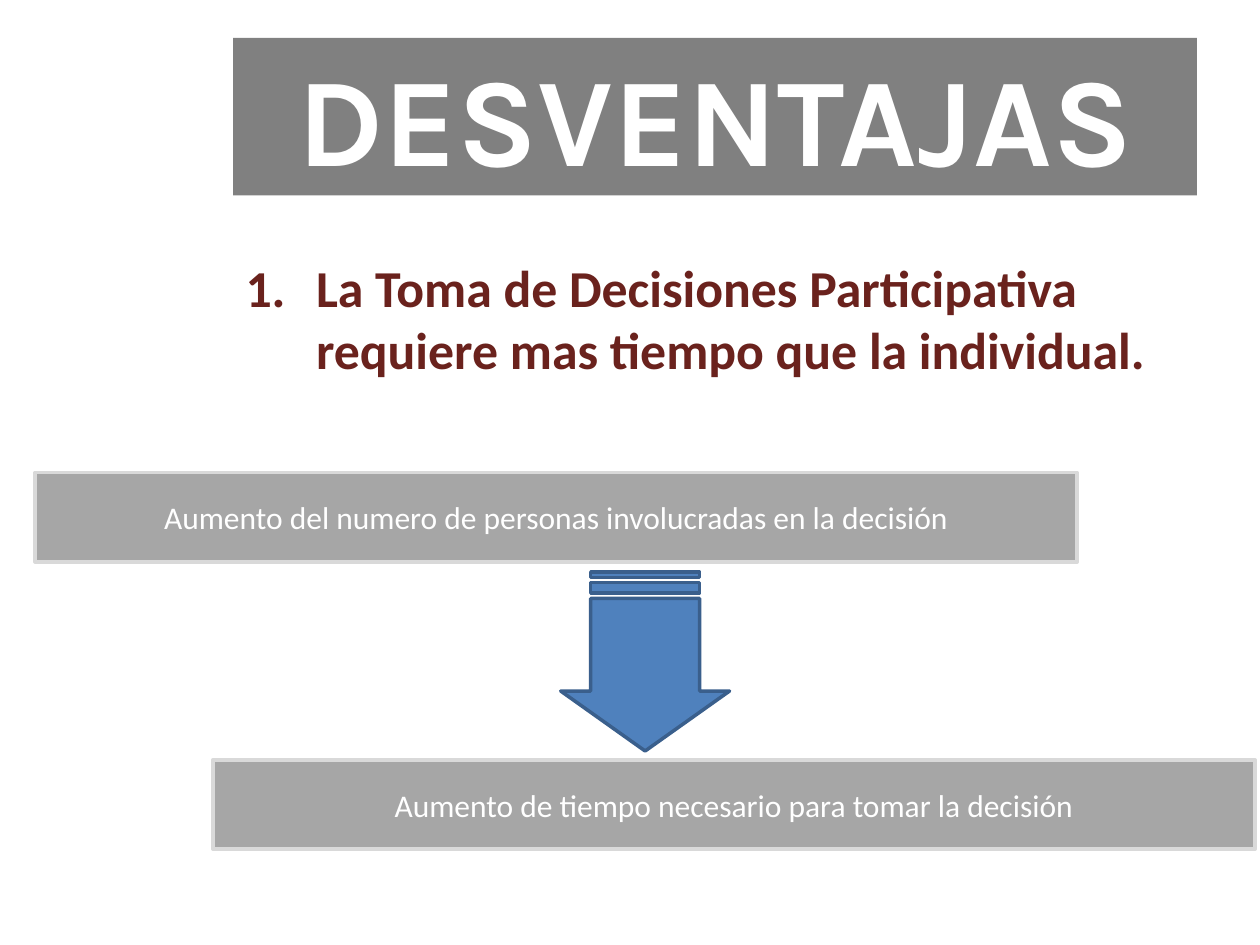
import lxml.etree
import pptx
import pptx.dml.color
import pptx.enum.shapes
import pptx.enum.text
import pptx.oxml.ns
import pptx.util

Inches = pptx.util.Inches
Pt = pptx.util.Pt
SHAPES = pptx.enum.shapes.MSO_SHAPE


def color(hex_code):
    """Turn a hex string into a colour."""
    return pptx.dml.color.RGBColor.from_string(hex_code)


def set_font(paragraph, name, size, hex_code, bold=False):
    """Set the font of a whole paragraph."""
    font = paragraph.font
    font.name, font.size, font.bold = name, Pt(size), bold
    font.color.rgb = color(hex_code)


def add_block(slide, preset, left, top, width, height, fill, line=None):
    """Add a filled shape with an optional outline."""
    block = slide.shapes.add_shape(
        preset, Inches(left), Inches(top), Inches(width), Inches(height))
    block.shadow.inherit = False
    block.fill.solid()
    block.fill.fore_color.rgb = color(fill)
    if line:
        block.line.color.rgb = color(line)
        block.line.width = Pt(2)
    else:
        block.line.fill.background()
    return block


def write_centered(block, text, name, size, bold=False):
    """Write one white centred line in a block."""
    frame = block.text_frame
    frame.word_wrap = True
    frame.vertical_anchor = pptx.enum.text.MSO_ANCHOR.MIDDLE
    paragraph = frame.paragraphs[0]
    paragraph.text = text
    paragraph.alignment = pptx.enum.text.PP_ALIGN.CENTER
    set_font(paragraph, name, size, "FFFFFF", bold)


def add_numbered_point(slide, text):
    """Add the numbered statement with a hanging indent."""
    point = slide.shapes.add_textbox(
        Inches(1.85), Inches(1.98), Inches(7.65), Inches(1.14))
    point.text_frame.word_wrap = True
    paragraph = point.text_frame.paragraphs[0]
    paragraph.text = text
    properties = paragraph._p.get_or_add_pPr()
    properties.set("marL", str(Inches(0.56)))
    properties.set("indent", str(-Inches(0.56)))
    number = lxml.etree.SubElement(
        properties, pptx.oxml.ns.qn("a:buAutoNum"))
    number.set("type", "arabicPeriod")
    set_font(paragraph, "Calibri", 29.6, "6A221D", True)


def add_statement(slide, left, top, text):
    """Add a grey bar with a statement."""
    bar = add_block(slide, SHAPES.RECTANGLE, left, top, 8.27, 0.71,
                    "A6A6A6", "D9D9D9")
    write_centered(bar, text, "Calibri", 18)


def add_down_arrow(slide):
    """Add the striped arrow from cause to effect."""
    arrow = add_block(slide, SHAPES.STRIPED_RIGHT_ARROW, 4.41, 4.58, 1.42, 1.34,
                      "4F81BD", "3A5F8C")
    arrow.rotation = 90
    arrow.adjustments[0] = 0.645
    arrow.adjustments[1] = 0.355


def main():
    """Build the slide and save it."""
    deck = pptx.Presentation()
    deck.slide_width, deck.slide_height = Inches(10), Inches(7.5)
    slide = deck.slides.add_slide(deck.slide_layouts[6])
    add_numbered_point(slide, "La Toma de Decisiones Participativa requiere "
                              "mas tiempo que la individual.")
    title = add_block(slide, SHAPES.RECTANGLE, 1.85, 0.3, 7.65, 1.25, "808080")
    write_centered(title, "DESVENTAJAS", "Karla", 72, True)
    add_statement(slide, 0.28, 3.75,
                  "Aumento del numero de personas involucradas en la decisión")
    add_statement(slide, 1.69, 6.03,
                  "Aumento de tiempo necesario para tomar la decisión")
    add_down_arrow(slide)
    deck.save("out.pptx")


if __name__ == "__main__":
    main()
